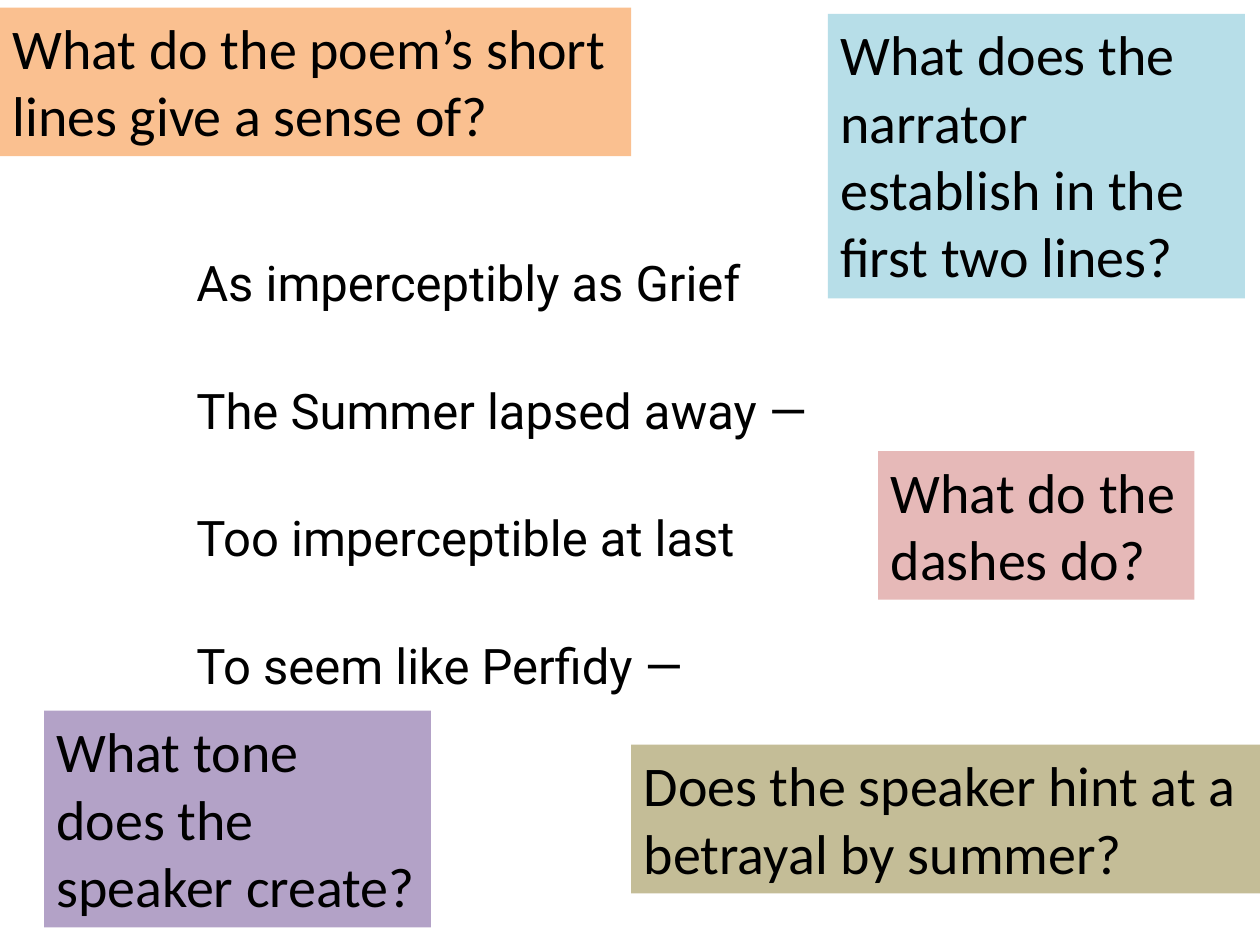
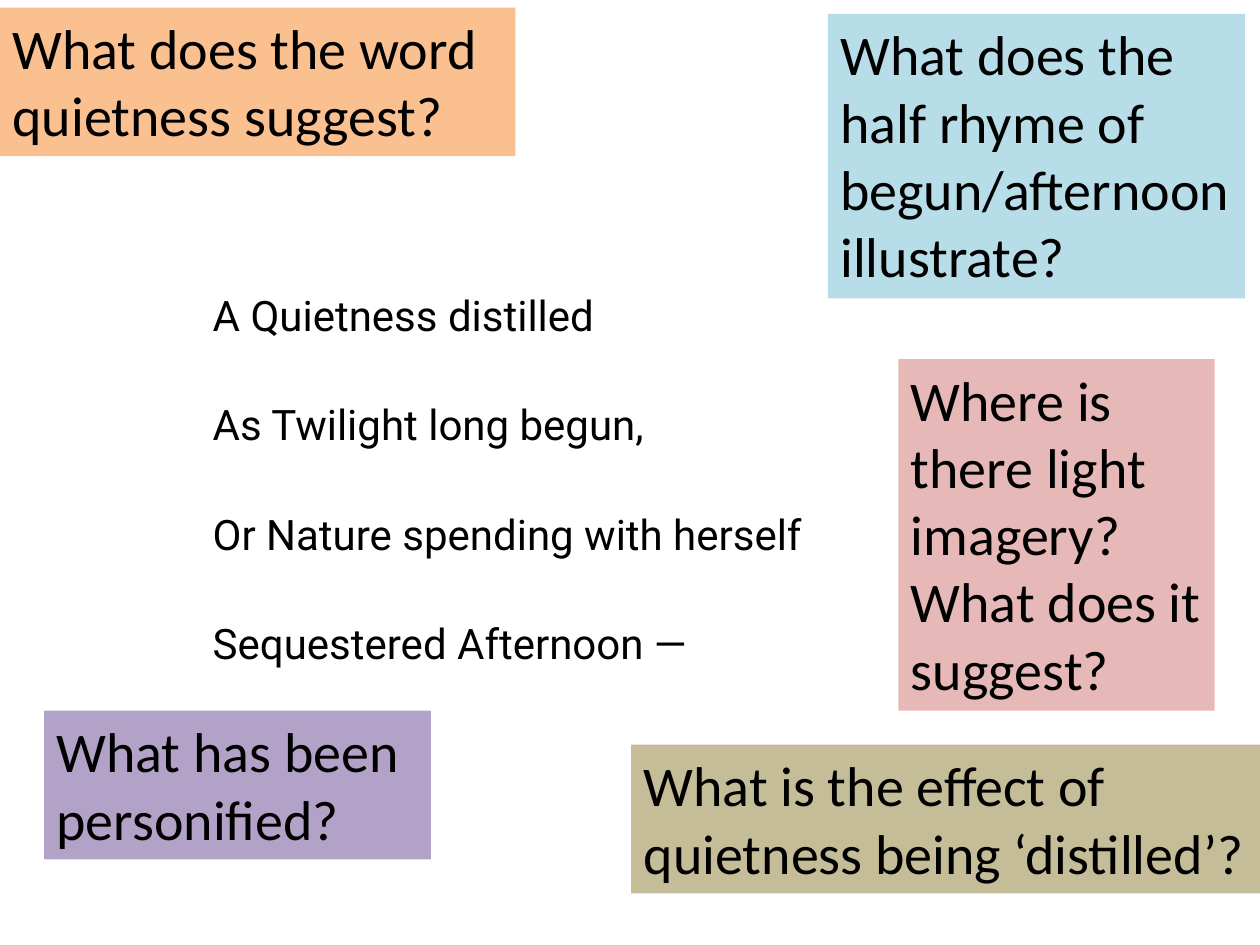
from lxml import etree
from pptx import Presentation
from pptx.dml.color import RGBColor
from pptx.enum import shapes, text
from pptx.oxml import ns
from pptx.util import Inches, Pt

BLACK = RGBColor(0x00, 0x00, 0x00)
ORANGE = RGBColor(0xFA, 0xC0, 0x90)
BLUE = RGBColor(0xB7, 0xDE, 0xE8)
PURPLE = RGBColor(0xB3, 0xA2, 0xC7)
TAN = RGBColor(0xC4, 0xBD, 0x97)
PINK = RGBColor(0xE6, 0xB9, 0xB8)

# Each stanza: place, size and verses, then its questions with place and colour
STANZAS = [
    ((1.46, 1.49, 6.21, 4.15), 28,
     ["As imperceptibly as Grief", "The Summer lapsed away —",
      "Too imperceptible at last", "To seem like Perfidy —"],
     [("What do the poem’s short lines give a sense of?", (0, 0.06, 5.01, 1.18), ORANGE),
      ("What does the narrator establish in the first two lines?", (6.57, 0.11, 3.31, 2.26), BLUE),
      ("What tone does the speaker create?", (0.35, 5.64, 3.07, 1.72), PURPLE),
      ("Does the speaker hint at a betrayal by summer?", (5.01, 5.91, 5.01, 1.18), TAN),
      ("What do the dashes do?", (6.97, 3.58, 2.51, 1.18), PINK)]),
    ((1.59, 1.85, 5, 3.45), 24,
     ["A Quietness distilled", "As Twilight long begun,",
      "Or Nature spending with herself", "Sequestered Afternoon —"],
     [("What does the word quietness suggest?", (0, 0.06, 4.09, 1.18), ORANGE),
      ("What does the half rhyme of begun/afternoon illustrate?", (6.57, 0.11, 3.31, 2.26), BLUE),
      ("What has been personified?", (0.35, 5.64, 3.07, 1.18), PURPLE),
      ("What is the effect of quietness being ‘distilled’?", (5.01, 5.91, 5.01, 1.18), TAN),
      ("Where is there light imagery? What does it suggest?", (7.13, 2.85, 2.51, 2.79), PINK)]),
]


def write_lines(frame, lines, font_name, size):
    frame.word_wrap = True
    frame.auto_size = text.MSO_AUTO_SIZE.SHAPE_TO_FIT_TEXT
    frame.vertical_anchor = text.MSO_ANCHOR.TOP
    frame.text = "\n".join(lines)
    for paragraph in frame.paragraphs:
        paragraph.alignment = text.PP_ALIGN.LEFT
        for run in paragraph.runs:
            run.font.name = font_name
            run.font.size = Pt(size)
            run.font.color.rgb = BLACK


prs = Presentation()
prs.slide_width = Inches(10)
prs.slide_height = Inches(7.5)

for stanza_place, verse_size, verses, questions in STANZAS:
    slide = prs.slides.add_slide(prs.slide_layouts[6])

    # Stanza, double spaced, with a fifth of a line before each verse
    stanza = slide.shapes.add_textbox(*map(Inches, stanza_place))
    write_lines(stanza.text_frame, verses, "Roboto", verse_size)
    for verse in stanza.text_frame.paragraphs:
        verse.line_spacing = 2.0
        before = etree.SubElement(verse._p.get_or_add_pPr(), ns.qn("a:spcBef"))
        etree.SubElement(before, ns.qn("a:spcPct"), val="20000")

    # Questions around the stanza
    for wording, place, colour in questions:
        question = slide.shapes.add_shape(
            shapes.MSO_SHAPE.RECTANGLE, *map(Inches, place))
        question.shadow.inherit = False
        question.fill.solid()
        question.fill.fore_color.rgb = colour
        question.line.fill.background()
        write_lines(question.text_frame, [wording], "Calibri", 32)

prs.save("out.pptx")
